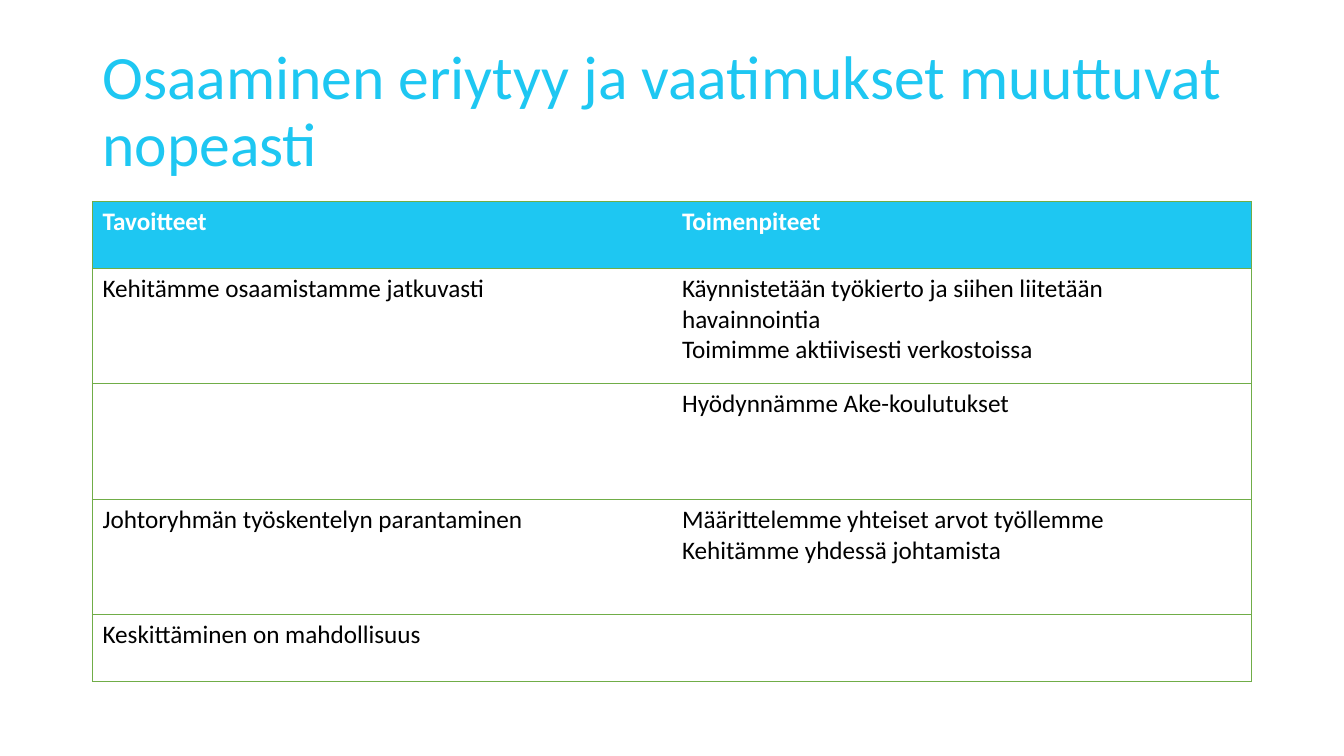
from dataclasses import dataclass

from lxml.etree import SubElement
from pptx import Presentation
from pptx.dml.color import RGBColor
from pptx.enum.text import MSO_ANCHOR
from pptx.oxml.ns import qn
from pptx.util import Cm, Pt


@dataclass(frozen=True)
class Theme:
    font: str = "Calibri"
    accent: str = "1EC7F2"
    border: str = "70AD47"
    paper: str = "FFFFFF"
    ink: str = "000000"
    title_size: int = 44
    table_size: int = 18
    border_width: int = 1


@dataclass(frozen=True)
class Box:
    left: float
    top: float
    width: float
    height: float

    def lengths(self):
        return Cm(self.left), Cm(self.top), Cm(self.width), Cm(self.height)


THEME = Theme()
TITLE = "Osaaminen eriytyy ja vaatimukset muuttuvat nopeasti"
# Each cell is a list of paragraphs; the first row is the header.
GOALS_AND_ACTIONS = [
    (["Tavoitteet"], ["Toimenpiteet"]),
    (["Kehitämme osaamistamme jatkuvasti"],
     ["Käynnistetään työkierto ja siihen liitetään havainnointia",
      "Toimimme aktiivisesti verkostoissa"]),
    ([], ["Hyödynnämme Ake-koulutukset"]),
    (["Johtoryhmän työskentelyn parantaminen"],
     ["Määrittelemme yhteiset arvot työllemme",
      "Kehitämme yhdessä johtamista"]),
    (["Keskittäminen on mahdollisuus"], []),
]
ROW_SHARES = [1.68, 2.91, 2.91, 2.91, 1.68]


def write_paragraphs(frame, texts, size, color, bold=False):
    for index, text in enumerate(texts):
        para = frame.add_paragraph() if index else frame.paragraphs[0]
        span = para.add_run()
        span.text = text
        span.font.name = THEME.font
        span.font.size = Pt(size)
        span.font.bold = bold
        span.font.color.rgb = RGBColor.from_string(color)


def set_borders(cell, sides):
    """Draw the named sides (L, R, T, B) and blank the others; call before filling."""
    properties = cell._tc.get_or_add_tcPr()
    for side in "LRTB":
        line = SubElement(properties, qn(f"a:ln{side}"), w=str(Pt(THEME.border_width)))
        if side in sides:
            fill = SubElement(line, qn("a:solidFill"))
            SubElement(fill, qn("a:srgbClr"), val=THEME.border)
        else:
            SubElement(line, qn("a:noFill"))


def add_title(page, box):
    frame = page.shapes.add_textbox(*box.lengths()).text_frame
    frame.word_wrap = True
    frame.vertical_anchor = MSO_ANCHOR.MIDDLE
    write_paragraphs(frame, [TITLE], THEME.title_size, THEME.accent)
    frame.paragraphs[0].line_spacing = 0.9


def add_goal_table(page, box):
    rows, columns = len(GOALS_AND_ACTIONS), len(GOALS_AND_ACTIONS[0])
    table = page.shapes.add_table(rows, columns, *box.lengths()).table
    table.horz_banding = False
    for column in table.columns:
        column.width = Cm(box.width / columns)
    for row, share in zip(table.rows, ROW_SHARES):
        row.height = Cm(box.height * share / sum(ROW_SHARES))

    for row_index, contents in enumerate(GOALS_AND_ACTIONS):
        header = row_index == 0
        for column_index, texts in enumerate(contents):
            cell = table.cell(row_index, column_index)
            set_borders(cell, "LTB" if column_index == 0 else "RTB")
            cell.fill.solid()
            cell.fill.fore_color.rgb = RGBColor.from_string(
                THEME.accent if header else THEME.paper)
            write_paragraphs(cell.text_frame, texts, THEME.table_size,
                             THEME.paper if header else THEME.ink, header)


def main():
    deck = Presentation()
    deck.slide_width, deck.slide_height = Cm(33.87), Cm(19.05)
    page = deck.slides.add_slide(deck.slide_layouts[6])
    add_title(page, Box(2.33, 1.01, 29.21, 3.68))
    add_goal_table(page, Box(2.33, 5.08, 29.21, 12.09))
    deck.save("out.pptx")


if __name__ == "__main__":
    main()
